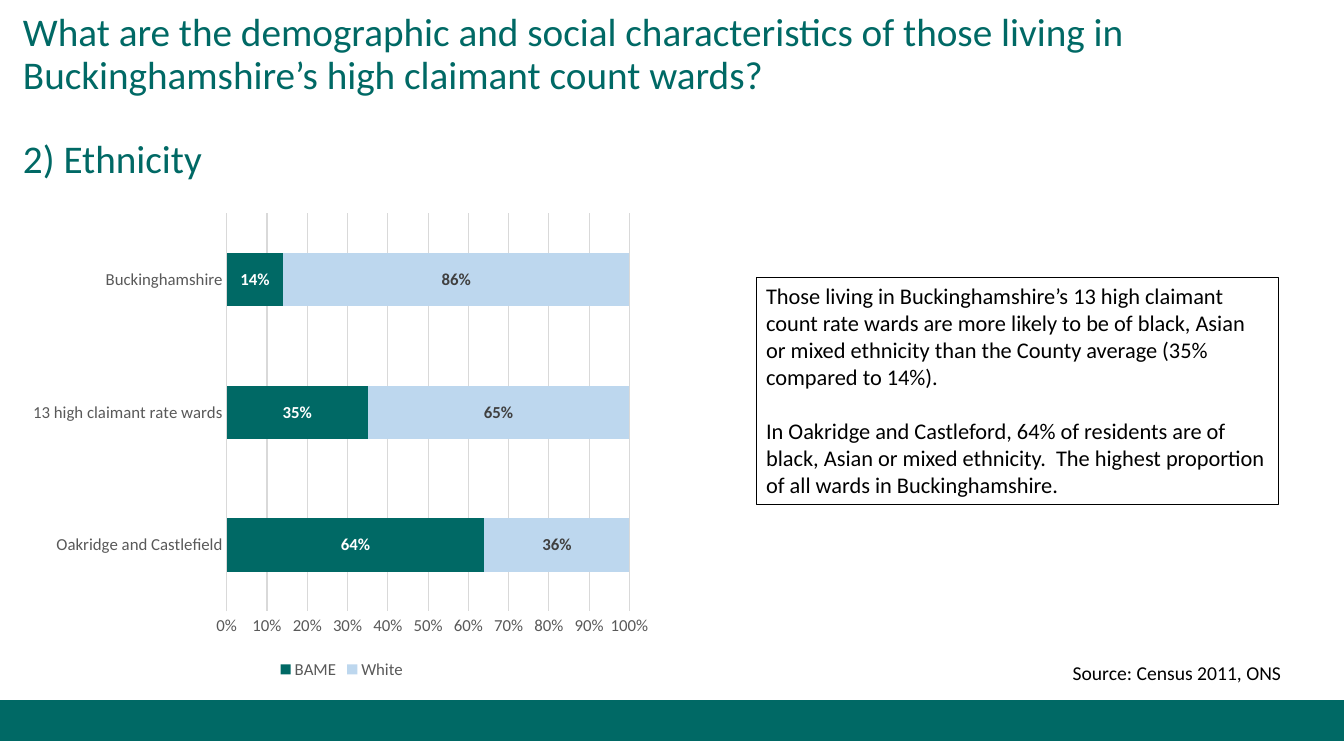
from lxml import etree
from pptx import Presentation
from pptx.chart.data import CategoryChartData
from pptx.dml.color import RGBColor
from pptx.enum.chart import XL_CHART_TYPE, XL_LEGEND_POSITION, XL_TICK_MARK
from pptx.enum.shapes import MSO_SHAPE
from pptx.enum.text import MSO_ANCHOR, PP_ALIGN
from pptx.oxml import parse_xml
from pptx.oxml.ns import nsdecls
from pptx.util import Inches, Pt

FONT = "Calibri"
TEAL, PALE, GREY, RULE = "006965", "BDD7EE", "595959", "D9D9D9"


def color(value):
    return RGBColor.from_string(value)


def set_font(font, size, ink, bold=False):
    font.name, font.size, font.bold = FONT, Pt(size), bold
    font.color.rgb = color(ink)


def set_line(line, ink, width=0.75):
    line.color.rgb = color(ink)
    line.width = Pt(width)


def add_text(slide, box, paras, size=16, ink="000000", anchor=MSO_ANCHOR.TOP,
             spacing=1, gap=0, border=None):
    shape = slide.shapes.add_textbox(*map(Inches, box))
    frame = shape.text_frame
    frame.word_wrap = True
    frame.vertical_anchor = anchor
    for i, words in enumerate(paras):
        para = frame.paragraphs[0] if i == 0 else frame.add_paragraph()
        para.alignment = PP_ALIGN.LEFT
        para.line_spacing = spacing
        para.space_before = Pt(gap if i else 0)
        run = para.add_run()
        run.text = words
        set_font(run.font, size, ink)
    if border:
        set_line(shape.line, border)


def add_band(slide, box, fill):
    band = slide.shapes.add_shape(MSO_SHAPE.RECTANGLE, *map(Inches, box))
    band.shadow.inherit = False
    band.fill.solid()
    band.fill.fore_color.rgb = color(fill)
    set_line(band.line, fill, 1)


def place_plot(chart, **parts):
    layout = parse_xml(f'<c:layout {nsdecls("c")}><c:manualLayout/></c:layout>')
    manual = layout[0]
    modes = {"layoutTarget": "inner", "xMode": "edge", "yMode": "edge"}
    for tag, val in {**modes, **parts}.items():
        node = etree.SubElement(manual, f"{{{manual.nsmap['c']}}}{tag}")
        node.set("val", str(val))
    plot = chart.plots[0]._element.getparent()
    for old in plot.findall("c:layout", plot.nsmap):
        plot.remove(old)
    plot.insert(0, layout)


def add_bars(slide, box, cats, series):
    data = CategoryChartData(number_format="0%")
    data.categories = cats
    for name, vals, *_ in series:
        data.add_series(name, vals)
    chart = slide.shapes.add_chart(
        XL_CHART_TYPE.BAR_STACKED, *map(Inches, box), data).chart
    chart.has_title = False
    set_font(chart.font, 12, GREY)

    # Bars and labels
    plot = chart.plots[0]
    plot.gap_width, plot.overlap, plot.vary_by_categories = 150, 100, False
    for bar, (_, _, fill, ink) in zip(plot.series, series):
        bar.format.fill.solid()
        bar.format.fill.fore_color.rgb = color(fill)
        labels = bar.data_labels
        labels.show_value = True
        labels.number_format, labels.number_format_is_linked = "0%", False
        set_font(labels.font, 12, ink, bold=True)

    # Axes
    for axis in (chart.category_axis, chart.value_axis):
        axis.major_tick_mark = axis.minor_tick_mark = XL_TICK_MARK.NONE
        set_font(axis.tick_labels.font, 12, GREY)
    set_line(chart.category_axis.format.line, RULE)
    scale = chart.value_axis
    scale.minimum_scale, scale.maximum_scale, scale.major_unit = 0, 1, 0.1
    scale.tick_labels.number_format = "0%"
    scale.tick_labels.number_format_is_linked = False
    scale.format.line.fill.background()
    set_line(scale.major_gridlines.format.line, RULE)

    # Legend
    chart.has_legend = True
    chart.legend.position = XL_LEGEND_POSITION.BOTTOM
    chart.legend.include_in_layout = False
    set_font(chart.legend.font, 12, GREY)
    place_plot(chart, x=0.32, y=0.02, w=0.63, h=0.83)


def main():
    deck = Presentation()
    deck.slide_width, deck.slide_height = Inches(13.33), Inches(7.5)
    slide = deck.slides.add_slide(deck.slide_layouts[6])

    # Footer band and title
    add_band(slide, (0, 6.95, 13.33, 0.4), TEAL)
    add_text(slide, (0.13, 0.24, 11.5, 1.45), [
        "What are the demographic and social characteristics of those living in "
        "Buckinghamshire’s high claimant count wards?",
        "2) Ethnicity",
    ], size=28, ink=TEAL, anchor=MSO_ANCHOR.MIDDLE, spacing=0.9, gap=30)

    # Ethnicity chart
    add_bars(slide, (0.22, 2.02, 6.34, 4.76),
             ["Oakridge and Castlefield", "13 high claimant rate wards",
              "Buckinghamshire"],
             [("BAME", (0.64, 0.35, 0.14), TEAL, "FFFFFF"),
              ("White", (0.36, 0.65, 0.86), PALE, "404040")])

    # Findings and source
    add_text(slide, (7.5, 2.75, 5.18, 2.26), [
        "Those living in Buckinghamshire’s 13 high claimant count rate wards are "
        "more likely to be of black, Asian or mixed ethnicity than the County "
        "average (35% compared to 14%).",
        "In Oakridge and Castleford, 64% of residents are of black, Asian or "
        "mixed ethnicity.  The highest proportion of all wards in "
        "Buckinghamshire.",
    ], gap=19.5, border="000000")
    add_text(slide, (10.54, 6.51, 2.6, 0.34), ["Source: Census 2011, ONS"], size=14)

    deck.save("out.pptx")


if __name__ == "__main__":
    main()
